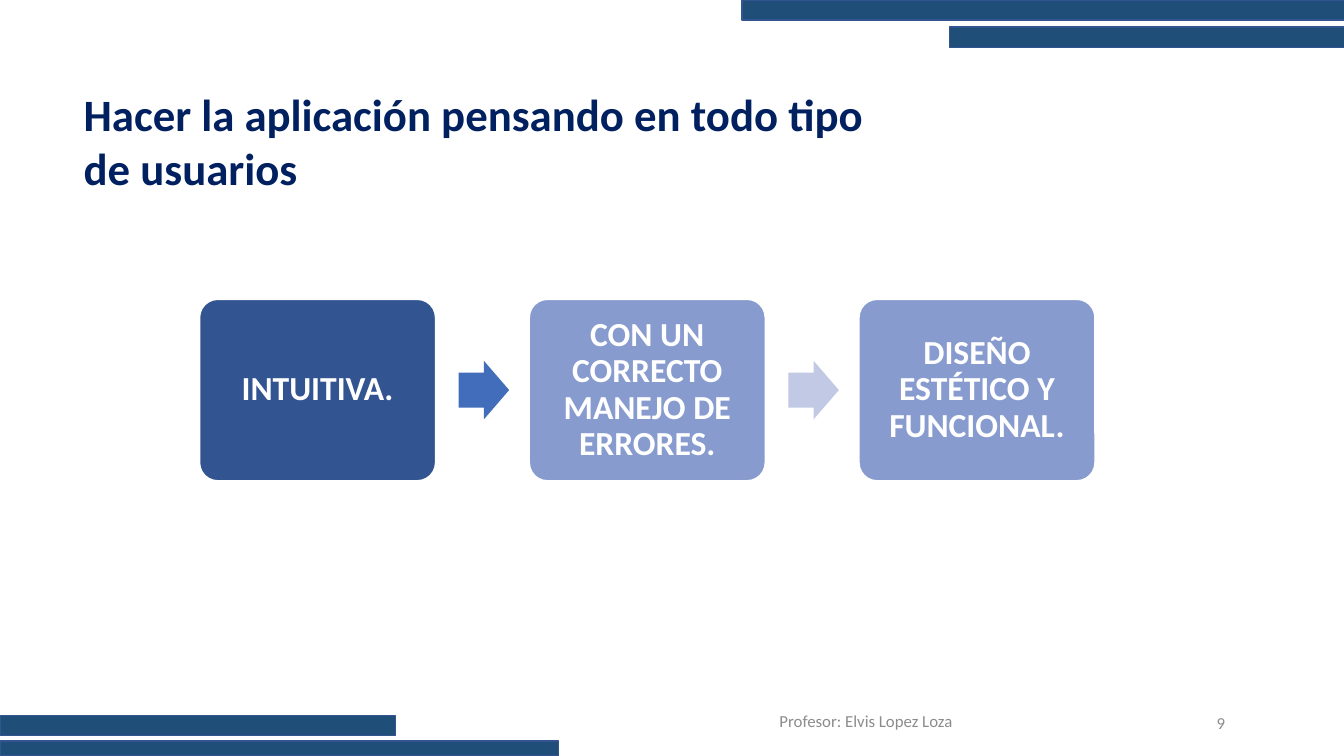
from pptx import Presentation
from pptx.dml.color import RGBColor
from pptx.enum.shapes import MSO_SHAPE
from pptx.enum.text import MSO_ANCHOR, PP_ALIGN
from pptx.util import Inches, Pt

FONT = "Calibri"
NAVY, BLUE, WHITE, GRAY = "002060", "325491", "FFFFFF", "8C8C8C"
BAND, PALE_BLUE = "1F4E79", "879BCE"

BANDS = [
    (7.36, 0, 5.98, 0.2),
    (9.42, 0.27, 3.92, 0.2),
    (0, 7.35, 5.54, 0.15),
    (0, 7.1, 3.92, 0.2),
]
STEPS = [
    ("INTUITIVA.", BLUE),
    ("CON UN CORRECTO MANEJO DE ERRORES.", PALE_BLUE),
    ("DISEÑO ESTÉTICO Y FUNCIONAL.", PALE_BLUE),
]
ARROW_COLORS = ["416DBB", "C1C9E4"]
STEP_LEFT, STEP_PITCH, ARROW_OFFSET = 1.98, 3.27, 2.57


def color(hex_string):
    return RGBColor.from_string(hex_string)


def add_shape(slide, kind, box, fill, line=None, adjustments=()):
    shape = slide.shapes.add_shape(kind, *map(Inches, box))
    shape.shadow.inherit = False
    shape.fill.solid()
    shape.fill.fore_color.rgb = color(fill)
    if line:
        shape.line.color.rgb = color(line)
        shape.line.width = Pt(1)
    else:
        shape.line.fill.background()
    for index, value in enumerate(adjustments):
        shape.adjustments[index] = value
    return shape


def write(shape, text, size, text_color, alignment, bold=False, anchor=MSO_ANCHOR.MIDDLE):
    frame = shape.text_frame
    frame.word_wrap = True
    frame.vertical_anchor = anchor
    frame.text = text
    paragraph = frame.paragraphs[0]
    paragraph.alignment = alignment
    paragraph.font.name = FONT
    paragraph.font.size = Pt(size)
    paragraph.font.bold = bold
    paragraph.font.color.rgb = color(text_color)
    return frame


def add_title(slide, text):
    title = slide.shapes.title
    title.left, title.top = Inches(0.73), Inches(0.81)
    title.width, title.height = Inches(8.01), Inches(1.18)
    write(title, text, 32, NAVY, PP_ALIGN.LEFT, bold=True, anchor=MSO_ANCHOR.TOP)


def add_step(slide, left, text, fill):
    box = add_shape(slide, MSO_SHAPE.ROUNDED_RECTANGLE, (left, 2.97, 2.34, 1.8),
                    fill, WHITE, [0.1])
    frame = write(box, text, 24, WHITE, PP_ALIGN.CENTER, bold=True)
    frame.margin_left = frame.margin_right = Inches(0.1)
    frame.margin_top = frame.margin_bottom = Inches(0.1)
    frame.paragraphs[0].line_spacing = 0.9


def add_footer(slide, left, top, text, alignment):
    box = slide.shapes.add_textbox(*map(Inches, (left, top, 2.36, 0.4)))
    write(box, text, 12, GRAY, alignment)


def main():
    presentation = Presentation()
    presentation.slide_width = Inches(13.33)
    presentation.slide_height = Inches(7.5)
    slide = presentation.slides.add_slide(presentation.slide_layouts[5])

    for band in BANDS:
        add_shape(slide, MSO_SHAPE.RECTANGLE, band, BAND, BLUE)
    add_title(slide, "Hacer la aplicación pensando en todo tipo de usuarios")
    for index, (text, fill) in enumerate(STEPS):
        add_step(slide, STEP_LEFT + index * STEP_PITCH, text, fill)
    for index, fill in enumerate(ARROW_COLORS):
        left = STEP_LEFT + ARROW_OFFSET + index * STEP_PITCH
        add_shape(slide, MSO_SHAPE.RIGHT_ARROW, (left, 3.58, 0.5, 0.58),
                  fill, adjustments=[0.6, 0.5])
    add_footer(slide, 7.41, 6.95, "Profesor: Elvis Lopez Loza", PP_ALIGN.CENTER)
    add_footer(slide, 9.89, 6.97, "9", PP_ALIGN.RIGHT)

    presentation.save("out.pptx")


if __name__ == "__main__":
    main()
